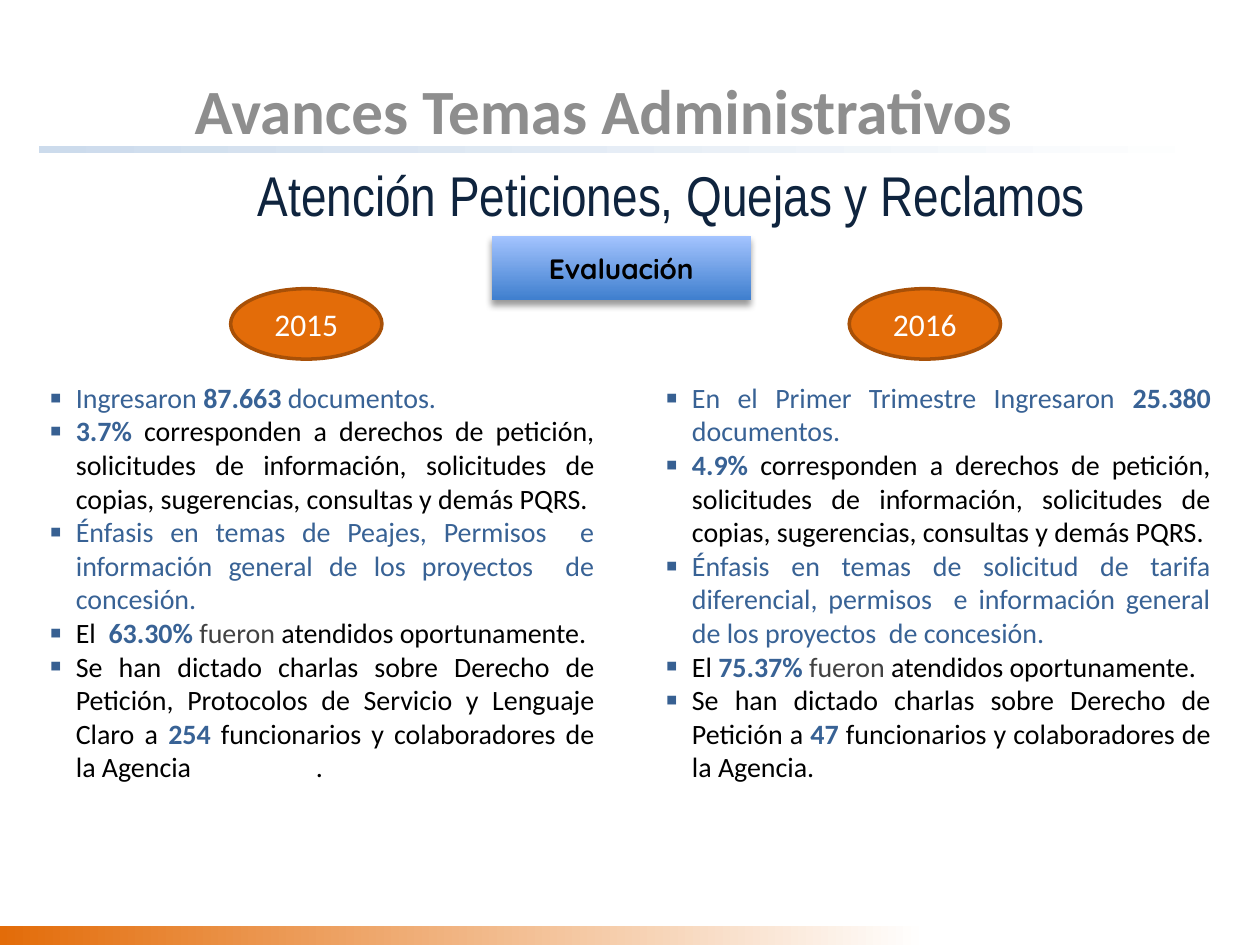
"""Build the slide comparing how citizen requests were handled in 2015 and 2016."""
from lxml.etree import SubElement
from pptx import Presentation
from pptx.dml.color import RGBColor
from pptx.enum.shapes import MSO_SHAPE
from pptx.enum.text import MSO_ANCHOR, MSO_AUTO_SIZE, PP_ALIGN
from pptx.oxml.ns import qn
from pptx.util import Cm, Pt

TITLE = "Avances Temas Administrativos"
SUBTITLE = "Atención Peticiones, Quejas y Reclamos"
BADGE = "Evaluación"

BLUE, BLACK, GREY = "386295", "000000", "424242"
ORANGE, WHITE = "E36C09", "FFFFFF"
PLAIN = {"color": BLACK}
ACCENT = {"color": BLUE}
FIGURE = {"color": BLUE, "bold": True}
MUTED = {"color": GREY}

REQUESTS = ("corresponden a derechos de petición, solicitudes de información, "
            "solicitudes de copias, sugerencias, consultas y demás PQRS.")
TIMELY = [("fueron ", MUTED), ("atendidos oportunamente.", PLAIN)]
TALKS = "Se han dictado charlas sobre Derecho de Petición"
YEARS = [
    ("2015", [
        [("Ingresaron ", ACCENT), ("87.663 ", FIGURE), ("documentos.", ACCENT)],
        [("3.7% ", FIGURE), (REQUESTS, PLAIN)],
        [("Énfasis en temas de Peajes, Permisos  e información general de los "
          "proyectos  de concesión.", ACCENT)],
        [("El  ", PLAIN), ("63.30% ", FIGURE), *TIMELY],
        [(TALKS + ", Protocolos de Servicio y Lenguaje Claro a ", PLAIN),
         ("254", FIGURE),
         (" funcionarios y colaboradores de la Agencia\t.", PLAIN)],
    ]),
    ("2016", [
        [("En el Primer Trimestre Ingresaron ", ACCENT), ("25.380 ", FIGURE),
         ("documentos.", ACCENT)],
        [("4.9% ", FIGURE), (REQUESTS, PLAIN)],
        [("Énfasis en temas de solicitud de tarifa diferencial, permisos  e "
          "información general de los proyectos  de concesión.", ACCENT)],
        [("El ", PLAIN), ("75.37% ", FIGURE), *TIMELY],
        [(TALKS + " a ", PLAIN), ("47 ", FIGURE),
         ("funcionarios y colaboradores de la Agencia.", PLAIN)],
    ]),
]

COLUMN_LEFT, COLUMN_STEP, COLUMN_WIDTH = 0.97, 12.42, 11.02
OVAL_LEFT, OVAL_STEP = 4.65, 12.47


def rgb(value):
    return RGBColor.from_string(value)


def assign(target, values):
    for name, value in values.items():
        setattr(target, name, value)


def place(item, left, top, width, height):
    assign(item, {"left": Cm(left), "top": Cm(top),
                  "width": Cm(width), "height": Cm(height)})


def add_run(paragraph, text, color, size=16, name="Calibri", bold=False):
    run = paragraph.add_run()
    run.text = text
    assign(run.font, {"size": Pt(size), "name": name, "bold": bold})
    run.font.color.rgb = rgb(color)


def write(item, text, align, anchor, **style):
    frame = item.text_frame
    assign(frame, {"word_wrap": True, "auto_size": MSO_AUTO_SIZE.NONE,
                   "vertical_anchor": anchor})
    paragraph = frame.paragraphs[0]
    paragraph.alignment = align
    add_run(paragraph, text, **style)


def add_plain_shape(slide, kind, box):
    item = slide.shapes.add_shape(kind, *map(Cm, box))
    item.shadow.inherit = False
    item.line.fill.background()
    return item


def add_gradient(slide, box, colors, angle=0):
    item = add_plain_shape(slide, MSO_SHAPE.RECTANGLE, box)
    item.fill.gradient()
    item.fill.gradient_angle = angle
    for stop, color in zip(item.fill.gradient_stops, colors):
        stop.color.rgb = rgb(color)
    return item


def add_shadow(item):
    effects = item._element.spPr.find(qn("a:effectLst"))
    shadow = SubElement(effects, qn("a:outerShdw"), blurRad=str(Pt(4)),
                        dist=str(Pt(3)), dir="5400000", rotWithShape="0")
    color = SubElement(shadow, qn("a:srgbClr"), val=BLACK)
    SubElement(color, qn("a:alpha"), val="40000")


def add_bullet(paragraph):
    props = paragraph._p.get_or_add_pPr()
    props.set("marL", str(Cm(0.56)))
    props.set("indent", str(Cm(-0.53)))
    SubElement(SubElement(props, qn("a:buClr")), qn("a:srgbClr"), val="376092")
    SubElement(props, qn("a:buSzPct"), val="125000")
    SubElement(props, qn("a:buFont"), typeface="Arial")
    SubElement(props, qn("a:buChar"), char="▪")
    tabs = SubElement(props, qn("a:tabLst"))
    SubElement(tabs, qn("a:tab"), pos=str(Cm(5.4)), algn="l")


def add_column(slide, left, points):
    frame = slide.shapes.add_textbox(
        Cm(left), Cm(7.67), Cm(COLUMN_WIDTH), Cm(8.97)).text_frame
    assign(frame, {"word_wrap": True, "margin_left": 0, "margin_top": 0,
                   "margin_right": 0, "margin_bottom": 0})
    for index, runs in enumerate(points):
        paragraph = frame.add_paragraph() if index else frame.paragraphs[0]
        assign(paragraph, {"alignment": PP_ALIGN.JUSTIFY, "level": 1})
        add_bullet(paragraph)
        for text, style in runs:
            add_run(paragraph, text, **style)


def add_year(slide, left, year):
    oval = add_plain_shape(slide, MSO_SHAPE.OVAL, (left, 5.82, 3.05, 1.42))
    oval.fill.solid()
    oval.fill.fore_color.rgb = rgb(ORANGE)
    oval.line.color.rgb = rgb("A85007")
    oval.line.width = Pt(2)
    write(oval, year, PP_ALIGN.CENTER, MSO_ANCHOR.MIDDLE, color=WHITE, size=18)


def main():
    deck = Presentation()
    assign(deck, {"slide_width": Cm(25.4), "slide_height": Cm(19.05)})
    slide = deck.slides.add_slide(deck.slide_layouts[5])

    add_gradient(slide, (0.79, 2.95, 23.85, 0.13), ("CCDBEC", WHITE))
    add_gradient(slide, (0, 18.67, 18.67, 0.38), (ORANGE, WHITE))

    title = slide.shapes.title
    place(title, 2.57, 1.32, 19.2, 3.33)
    write(title, TITLE, PP_ALIGN.CENTER, MSO_ANCHOR.TOP,
          color="8E8E8E", size=36, bold=True)

    subtitle = slide.shapes.add_textbox(Cm(2.18), Cm(3.12), Cm(19.96), Cm(1.63))
    write(subtitle, SUBTITLE, PP_ALIGN.RIGHT, MSO_ANCHOR.TOP,
          color="0F243E", size=32, name="Arial Narrow")

    badge = add_gradient(slide, (9.91, 4.75, 5.23, 1.3), ("A4C4FF", "3F7FCE"), 270)
    add_shadow(badge)
    write(badge, BADGE, PP_ALIGN.CENTER, MSO_ANCHOR.MIDDLE,
          color=BLACK, name="Quicksand", bold=True)

    for index, (year, points) in enumerate(YEARS):
        add_year(slide, OVAL_LEFT + index * OVAL_STEP, year)
        add_column(slide, COLUMN_LEFT + index * COLUMN_STEP, points)

    deck.save("out.pptx")


if __name__ == "__main__":
    main()
